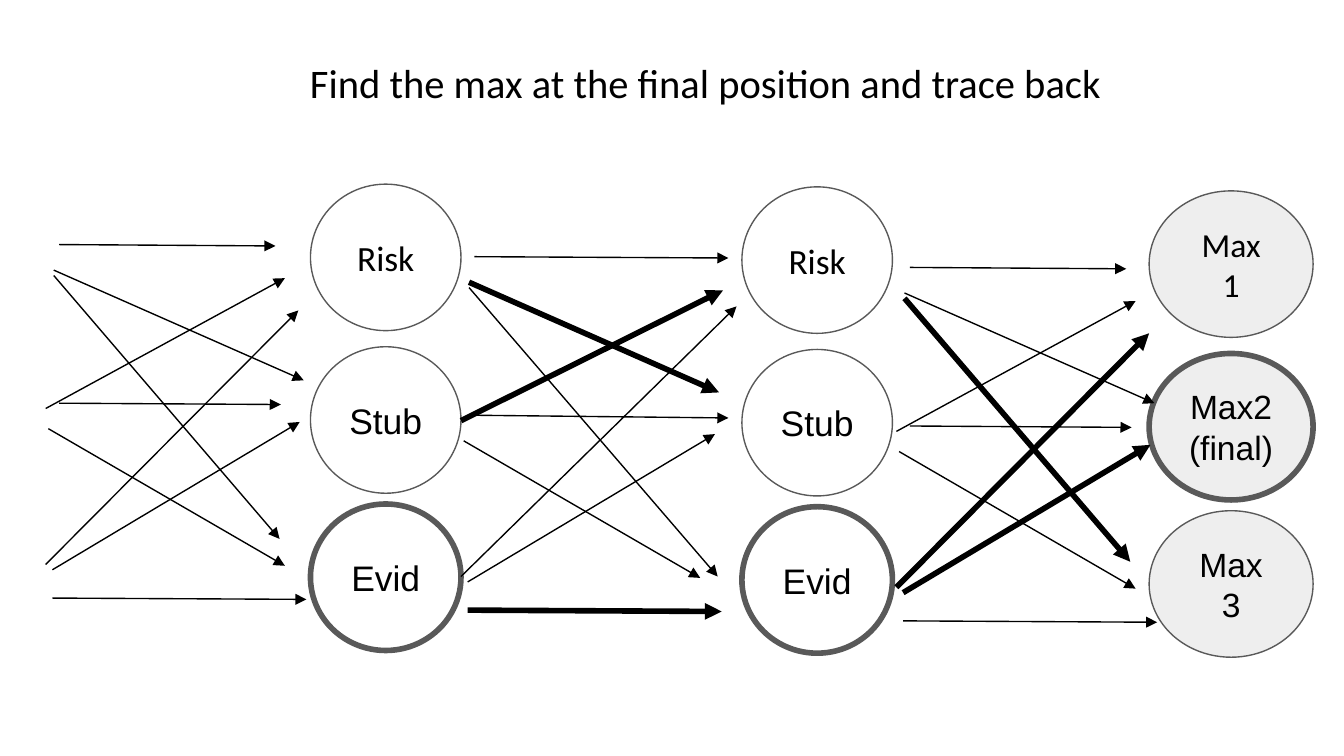
from lxml.etree import SubElement
from pptx import Presentation
from pptx.dml.color import RGBColor
from pptx.enum.shapes import MSO_CONNECTOR as CONN, MSO_SHAPE as SHAPE
from pptx.enum.text import MSO_ANCHOR as ANCHOR, PP_ALIGN as ALIGN
from pptx.oxml.ns import qn
from pptx.util import Inches, Pt

BLACK, GRAY, PALE, WHITE = "000000", "595959", "EEEEEE", "FFFFFF"
THIN, BOLD = 0.75, 3

STARTS = {
    "risk-risk": (0.1, 0), "risk-stub": (0.06, 0.19), "risk-evid": (0.06, 0.23),
    "stub-risk": (0, 1.22), "stub-stub": (0.1, 1.18), "stub-evid": (0.02, 1.37),
    "evid-risk": (0, 2.38), "evid-stub": (0.05, 2.42), "evid-evid": (0.05, 2.63),
}
ENDS = {
    "risk-risk": (1.71, 0.01), "risk-stub": (1.92, 1.01), "risk-evid": (1.74, 2.19),
    "stub-risk": (1.78, 0.25), "stub-stub": (1.75, 1.19), "stub-evid": (1.78, 2.39),
    "evid-risk": (1.88, 0.49), "evid-stub": (1.89, 1.32), "evid-evid": (1.94, 2.64),
}
MIDDLE_ENDS = ENDS | {
    "risk-risk": (1.99, 0.01), "risk-evid": (1.91, 2.38), "stub-risk": (1.95, 0.25),
    "stub-stub": (1.99, 1.2), "evid-risk": (2.05, 0.37),
}


def color(value):
    """Turn a hex string into a colour."""
    return RGBColor.from_string(value)


def write(sp, text, size=19, font="Arial", anchor=ANCHOR.MIDDLE, spacing=None, after=0):
    """Write centred black text into a shape."""
    tf = sp.text_frame
    tf.word_wrap, tf.vertical_anchor = True, anchor
    tf.margin_left = tf.margin_right = tf.margin_top = tf.margin_bottom = Inches(0.1)
    p = tf.paragraphs[0]
    p.text, p.alignment = text, ALIGN.CENTER
    p.line_spacing, p.space_after = spacing, Pt(after)
    for r in p.runs:
        r.font.size, r.font.name = Pt(size), font
        r.font.color.rgb = color(BLACK)


def add_title(s, x, y, w, h):
    """Add the slide's title line."""
    sp = s.shapes.add_textbox(Inches(x), Inches(y), Inches(w), Inches(h))
    write(sp, "Find the max at the final position and trace back", size=21.7,
          font="Calibri", anchor=ANCHOR.TOP, spacing=1.15, after=12)


def add_states(s, x, y, w, labels, chosen, fill=WHITE, size=19):
    """Add a column of three state circles with the chosen one outlined boldly."""
    for i, (label, dy) in enumerate(zip(labels, (0, 1.21, 2.38))):
        sp = s.shapes.add_shape(SHAPE.OVAL, Inches(x), Inches(y + dy), Inches(w), Inches(1.09))
        sp.shadow.inherit = False
        sp.fill.solid()
        sp.fill.fore_color.rgb = color(fill)
        sp.line.color.rgb = color(GRAY)
        sp.line.width = Pt(BOLD if i == chosen else THIN)
        write(sp, label, size=size, font="Arial" if i else "Calibri")


def add_arrow(s, x1, y1, x2, y2, width):
    """Add a straight black arrow."""
    line = s.shapes.add_connector(CONN.STRAIGHT, Inches(x1), Inches(y1), Inches(x2), Inches(y2))
    line.line.color.rgb = color(BLACK)
    line.line.width = Pt(width)
    ln = line._element.spPr.find(qn("a:ln"))
    SubElement(ln, qn("a:tailEnd"), type="triangle")
    SubElement(line._element.spPr, qn("a:effectLst"))


def add_transitions(s, x, y, ends=ENDS, best=()):
    """Add the nine transitions between two columns with the best ones in bold."""
    for name, (x1, y1) in STARTS.items():
        x2, y2 = ends[name]
        add_arrow(s, x + x1, y + y1, x + x2, y + y2, BOLD if name in best else THIN)


def main():
    """Build the slide and save it."""
    prs = Presentation()
    prs.slide_width, prs.slide_height = Inches(10), Inches(10 * 9 / 16)
    s = prs.slides.add_slide(prs.slide_layouts[6])
    add_title(s, 2.05, 0.28, 6.4, 0.75)
    states = ("Risk", "Stub", "Evid")
    add_states(s, 2.31, 1.37, 1.12, states, chosen=2)
    add_states(s, 5.52, 1.39, 1.12, states, chosen=2)
    add_states(s, 8.55, 1.42, 1.22, ("Max\v1", "Max2(final)", "Max 3"), chosen=1,
               fill=PALE, size=18)
    add_transitions(s, 0.34, 1.82)
    add_transitions(s, 3.43, 1.91, MIDDLE_ENDS, best=("risk-stub", "stub-risk", "evid-evid"))
    add_transitions(s, 6.67, 1.99, best=("risk-evid", "evid-risk", "evid-stub"))
    prs.save("out.pptx")


if __name__ == "__main__":
    main()
